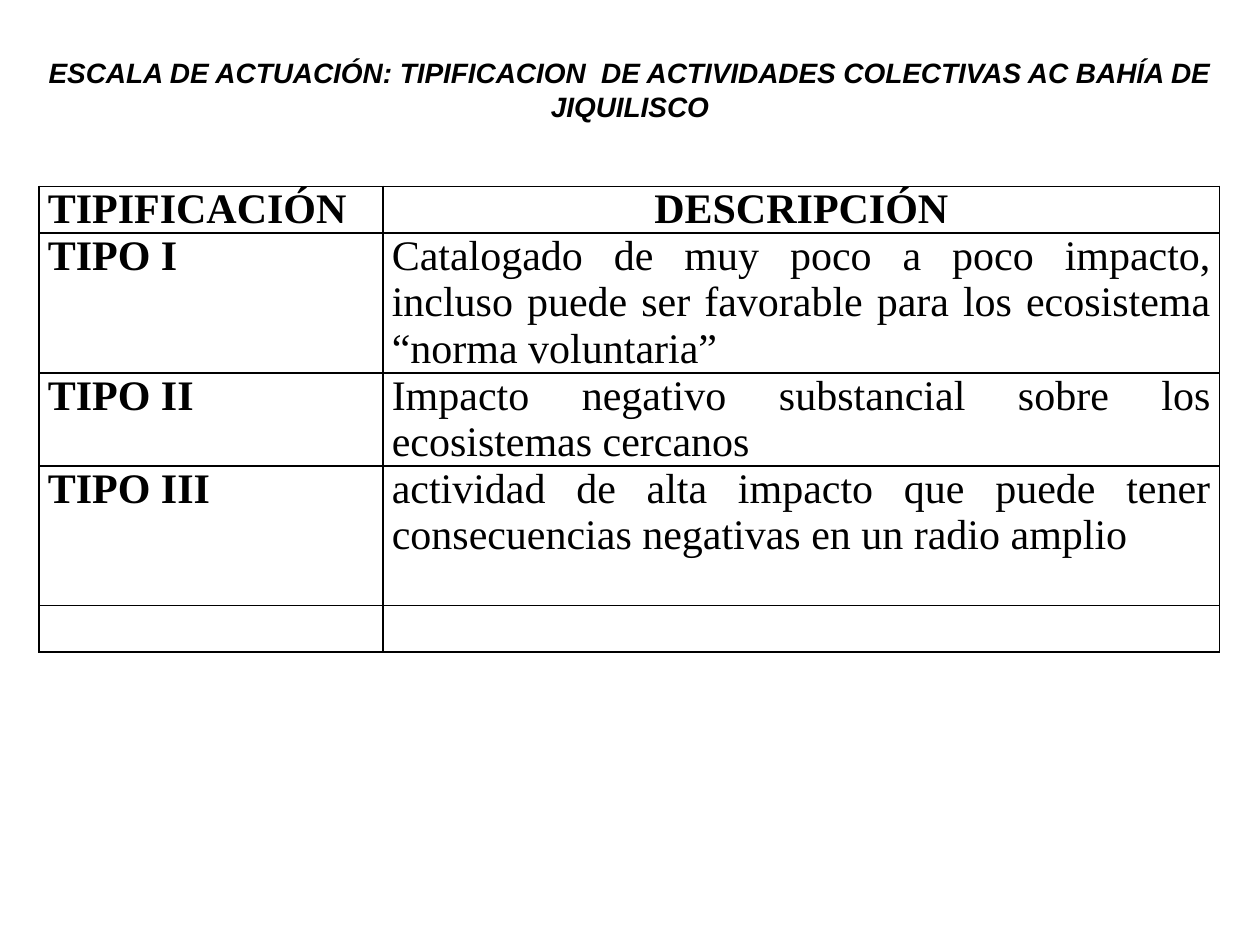
from typing import NamedTuple

from lxml import etree
from pptx import Presentation
from pptx.dml.color import RGBColor
from pptx.enum import text
from pptx.oxml import ns
from pptx.util import Inches, Pt

BLACK = RGBColor(0x00, 0x00, 0x00)
COLUMN_WIDTHS = (2.73, 6.64)
JUSTIFY = text.PP_ALIGN.JUSTIFY
CENTER = text.PP_ALIGN.CENTER


class ImpactRow(NamedTuple):
    height: float
    kind: str = ""
    description: str = ""
    bold: bool = False
    align: text.PP_ALIGN = JUSTIFY


ROWS = (
    ImpactRow(0.37, "TIPIFICACIÓN", "DESCRIPCIÓN", True, CENTER),
    ImpactRow(1.11, "TIPO I", "Catalogado de muy poco a poco impacto, incluso puede ser "
              "favorable para los ecosistema “norma voluntaria”"),
    ImpactRow(0.73, "TIPO II", "Impacto negativo substancial sobre los ecosistemas cercanos"),
    ImpactRow(1.11, "TIPO III", "actividad de alta impacto que puede tener consecuencias "
              "negativas en un radio amplio"),
    ImpactRow(0.37),
)


def add_run(p, content: str, font: str, size: int, bold: bool, italic: bool = False) -> None:
    r = p.add_run()
    r.text = content
    r.font.name = font
    r.font.size = Pt(size)
    r.font.bold = bold
    r.font.italic = italic
    r.font.color.rgb = BLACK


def add_borders(cell) -> None:
    """Draw a thin black line on each side; lines must precede the fill in the XML."""
    props = cell._tc.get_or_add_tcPr()
    for i, side in enumerate(("lnL", "lnR", "lnT", "lnB")):
        line = etree.Element(ns.qn(f"a:{side}"), w=str(Pt(1)))
        fill = etree.SubElement(line, ns.qn("a:solidFill"))
        etree.SubElement(fill, ns.qn("a:srgbClr"), val=str(BLACK))
        props.insert(i, line)


def fill_cell(cell, content: str, bold: bool, align: text.PP_ALIGN) -> None:
    cell.margin_left = cell.margin_right = Inches(0.07)
    cell.margin_top = cell.margin_bottom = 0
    cell.fill.background()
    add_borders(cell)
    p = cell.text_frame.paragraphs[0]
    p.alignment = align
    if content:
        add_run(p, content, "Times New Roman", 24, bold)


def add_title(slide, content: str) -> None:
    title = slide.shapes.title
    title.left, title.top = Inches(0), Inches(0.39)
    title.width, title.height = Inches(10), Inches(0.64)
    tf = title.text_frame
    tf.word_wrap = True
    tf.auto_size = text.MSO_AUTO_SIZE.NONE
    tf.vertical_anchor = text.MSO_ANCHOR.TOP
    p = tf.paragraphs[0]
    p.alignment = CENTER
    add_run(p, content, "Arial", 16, True, True)


def add_impact_table(slide) -> None:
    frame = slide.shapes.add_table(
        len(ROWS), len(COLUMN_WIDTHS), Inches(0.31), Inches(1.48),
        Inches(sum(COLUMN_WIDTHS)), Inches(sum(row.height for row in ROWS)))
    table = frame.table
    table.first_row = table.horz_banding = False
    for column, width in zip(table.columns, COLUMN_WIDTHS):
        column.width = Inches(width)
    for i, row in enumerate(ROWS):
        table.rows[i].height = Inches(row.height)
        fill_cell(table.cell(i, 0), row.kind, True, JUSTIFY)
        fill_cell(table.cell(i, 1), row.description, row.bold, row.align)


def main() -> None:
    prs = Presentation()
    prs.slide_width, prs.slide_height = Inches(10), Inches(7.5)
    slide = prs.slides.add_slide(prs.slide_layouts[5])
    add_impact_table(slide)
    add_title(slide, "ESCALA DE ACTUACIÓN: TIPIFICACION  DE ACTIVIDADES COLECTIVAS "
              "AC BAHÍA DE JIQUILISCO")
    prs.save("out.pptx")


if __name__ == "__main__":
    main()
